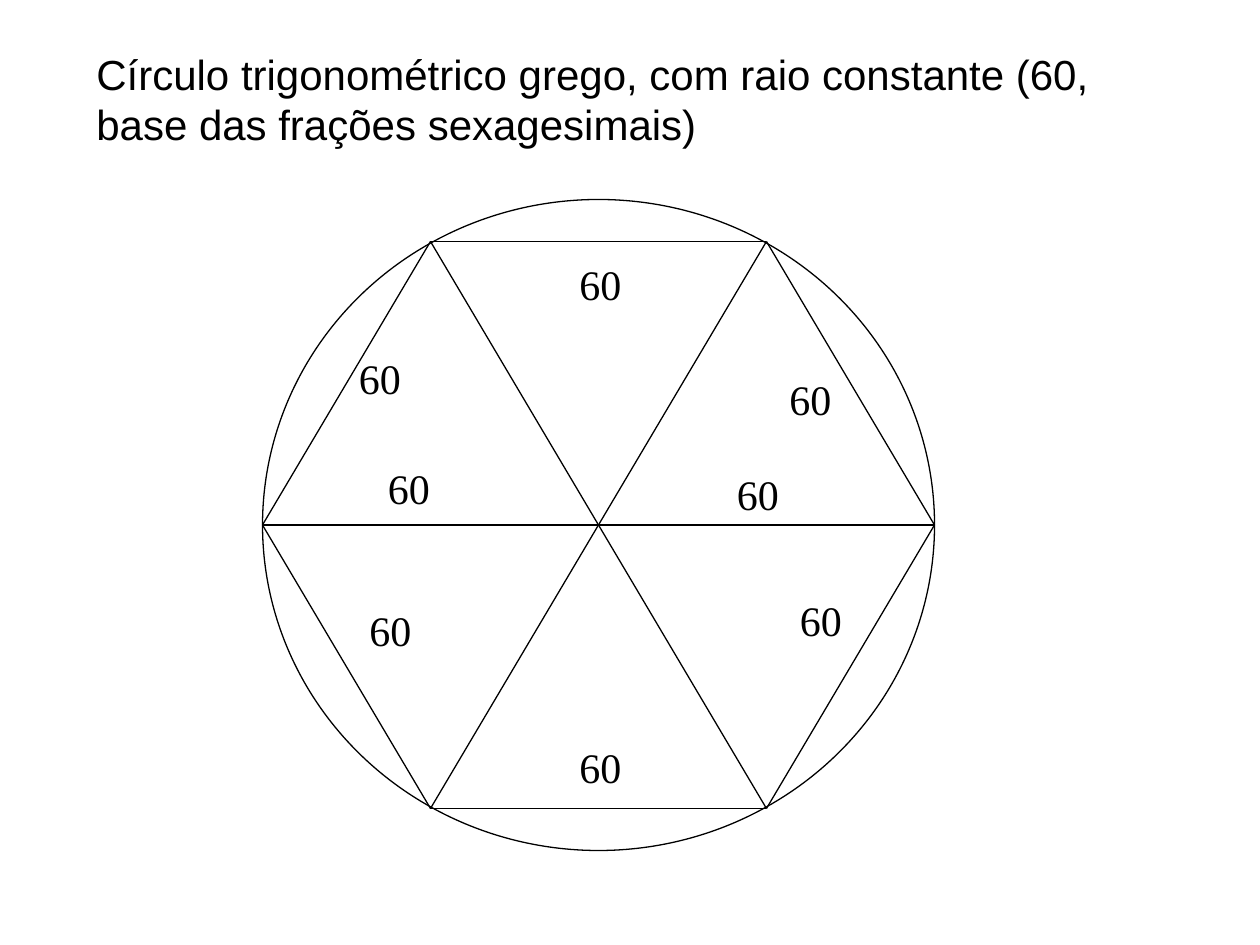
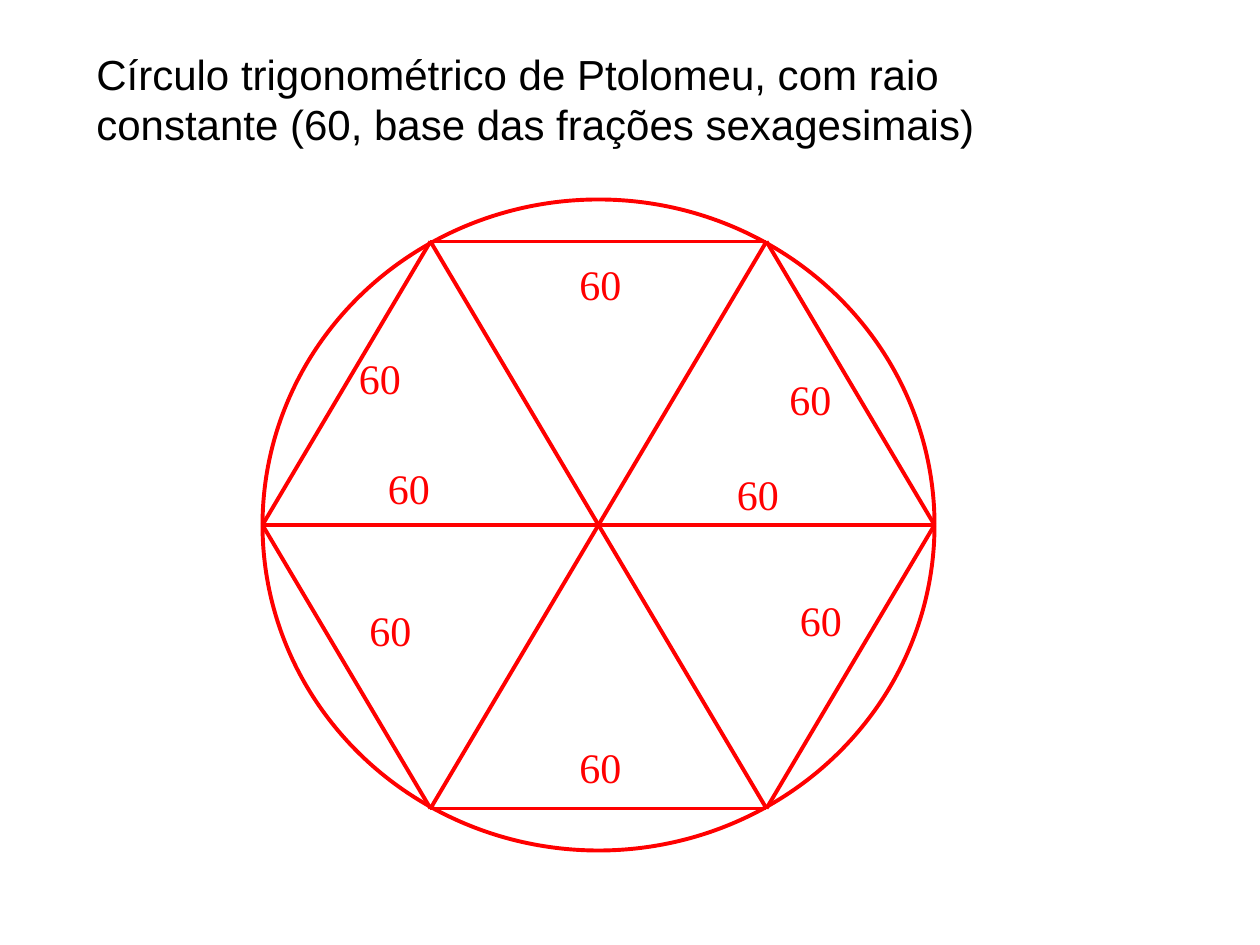
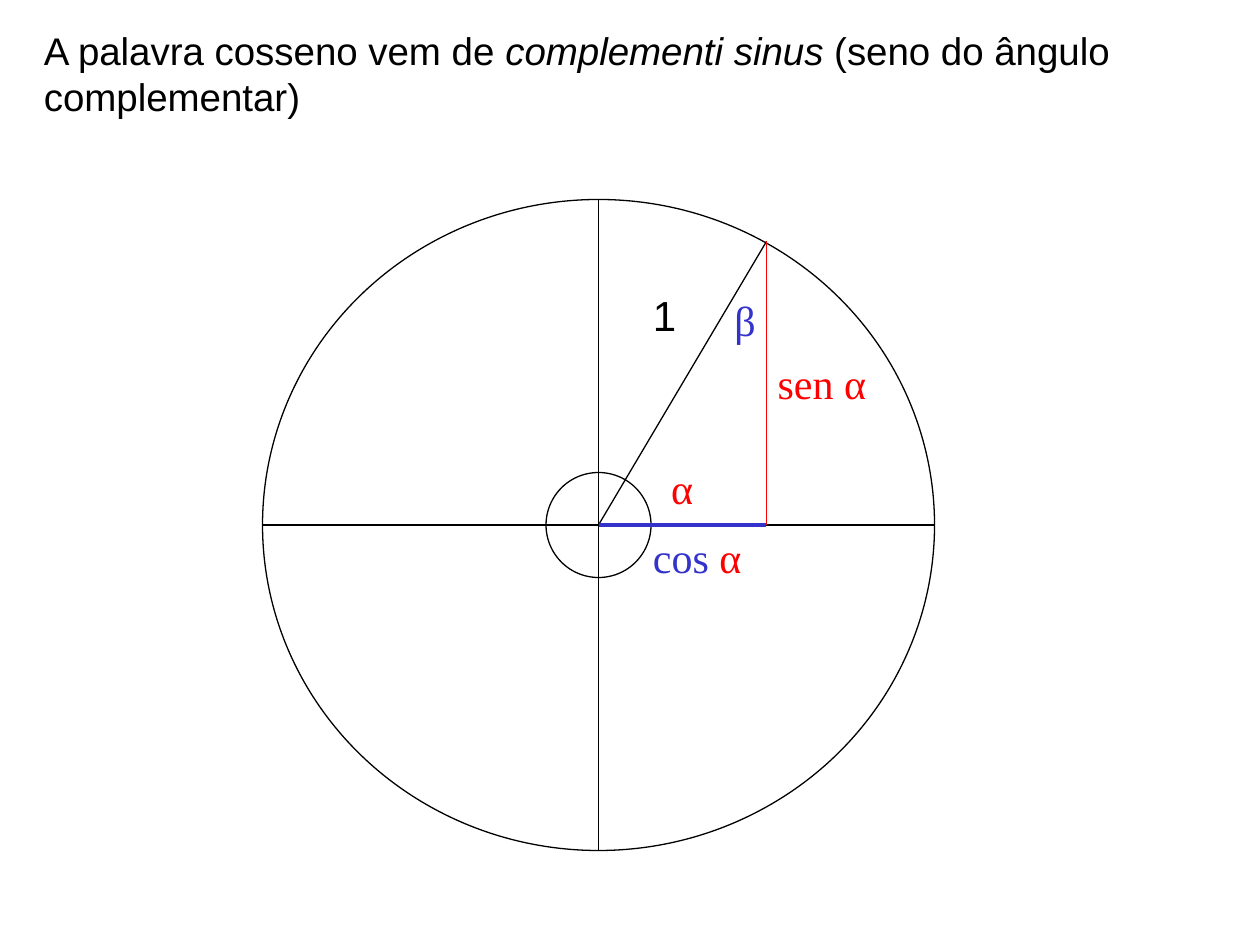
import dataclasses
import itertools

import lxml.etree
import pptx
import pptx.dml.color
import pptx.enum.shapes
import pptx.enum.text
import pptx.oxml.ns
import pptx.slide
import pptx.util

# Shared scale, colours and fonts
PX = 9525
BLACK = pptx.dml.color.RGBColor(0x00, 0x00, 0x00)
RED = pptx.dml.color.RGBColor(0xFF, 0x00, 0x00)
BLUE = pptx.dml.color.RGBColor(0x33, 0x33, 0xCC)
SANS = "Arial"
SERIF = "Times New Roman"
THIN, MEDIUM, THICK = 0.75, 1, 2.25

# Shared geometry, in px
Point = tuple[int, int]
CENTER: Point = (456, 400)
RADIUS_X, RADIUS_Y = 256, 248
HALF_SIDE, APOTHEM = 128, 216
LABEL_HEIGHT = 48


@dataclasses.dataclass(frozen=True)
class Span:
    text: str
    color: pptx.dml.color.RGBColor = BLACK
    font: str = SERIF
    size: int = 24
    italic: bool = False


@dataclasses.dataclass(frozen=True)
class Label:
    left: int
    top: int
    width: int
    spans: tuple[Span, ...]
    height: int = LABEL_HEIGHT
    wrap: bool = False


@dataclasses.dataclass(frozen=True)
class Stroke:
    color: pptx.dml.color.RGBColor = BLACK
    width: float = THIN


def from_center(right: int, down: int) -> Point:
    return CENTER[0] + right, CENTER[1] + down


# Vertices run clockwise from the left end of the diameter
HEXAGON = [
    from_center(-RADIUS_X, 0),
    from_center(-HALF_SIDE, -APOTHEM),
    from_center(HALF_SIDE, -APOTHEM),
    from_center(RADIUS_X, 0),
    from_center(HALF_SIDE, APOTHEM),
    from_center(-HALF_SIDE, APOTHEM),
]
SIXTY_PLACES = [
    (286, 348), (272, 456), (432, 560), (600, 448),
    (552, 352), (592, 280), (432, 192), (264, 264),
]


# Drawing functions
def set_attributes(target: object, values: dict[str, object]) -> None:
    for name, value in values.items():
        setattr(target, name, value)


def apply_stroke(line: object, stroke: Stroke) -> None:
    line.color.rgb = stroke.color
    line.width = pptx.util.Pt(stroke.width)


def draw_label(page: pptx.slide.Slide, label: Label) -> None:
    bounds = (label.left, label.top, label.width, label.height)
    box = page.shapes.add_textbox(*(length * PX for length in bounds))
    set_attributes(box.text_frame, {
        "word_wrap": label.wrap,
        "auto_size": pptx.enum.text.MSO_AUTO_SIZE.SHAPE_TO_FIT_TEXT,
    })
    para = box.text_frame.paragraphs[0]
    for span in label.spans:
        run = para.add_run()
        run.text = span.text
        set_attributes(run.font, {
            "name": span.font,
            "size": pptx.util.Pt(span.size),
            "italic": span.italic,
        })
        run.font.color.rgb = span.color


def draw_line(page: pptx.slide.Slide, start: Point, end: Point, stroke: Stroke) -> None:
    line = page.shapes.add_connector(
        pptx.enum.shapes.MSO_CONNECTOR.STRAIGHT,
        *(length * PX for length in start + end),
    )
    apply_stroke(line.line, stroke)
    lxml.etree.SubElement(line._element.spPr, pptx.oxml.ns.qn("a:effectLst"))


def draw_circle(page: pptx.slide.Slide, radius_x: int, radius_y: int, stroke: Stroke) -> None:
    left, top = from_center(-radius_x, -radius_y)
    bounds = (left, top, 2 * radius_x, 2 * radius_y)
    circle = page.shapes.add_shape(
        pptx.enum.shapes.MSO_SHAPE.OVAL, *(length * PX for length in bounds)
    )
    circle.shadow.inherit = False
    circle.fill.background()
    apply_stroke(circle.line, stroke)


def add_page(deck: object) -> pptx.slide.Slide:
    return deck.slides.add_slide(deck.slide_layouts[6])


# Circle with an inscribed hexagon of side 60
def build_hexagon_page(deck: object, title: str, stroke: Stroke) -> None:
    page = add_page(deck)
    draw_circle(page, RADIUS_X, RADIUS_Y, stroke)
    for start, end in zip(HEXAGON[:3], HEXAGON[3:]):
        draw_line(page, start, end, stroke)
    for start, end in itertools.pairwise(HEXAGON + HEXAGON[:1]):
        draw_line(page, start, end, stroke)
    for left, top in SIXTY_PLACES:
        draw_label(page, Label(left, top, 51, (Span("60", stroke.color),)))
    draw_label(page, Label(64, 32, 785, (Span(title, font=SANS),), 86, True))


# Unit circle with sine and cosine
def build_cosine_page(deck: object) -> None:
    page = add_page(deck)
    thin = Stroke()
    draw_circle(page, RADIUS_X, RADIUS_Y, thin)
    draw_circle(page, 40, 40, thin)
    draw_line(page, from_center(-RADIUS_X, 0), from_center(RADIUS_X, 0), thin)
    draw_line(page, from_center(0, -RADIUS_Y), from_center(0, RADIUS_Y), thin)

    # Triangle, then its coloured legs
    foot, tip = from_center(HALF_SIDE, 0), from_center(HALF_SIDE, -APOTHEM)
    for start, end, stroke in (
        (tip, foot, Stroke(width=MEDIUM)),
        (CENTER, foot, thin),
        (CENTER, tip, thin),
        (tip, foot, Stroke(RED)),
        (CENTER, foot, Stroke(BLUE, THICK)),
    ):
        draw_line(page, start, end, stroke)

    # Title and labels
    title = (
        Span("A palavra cosseno vem de ", font=SANS, size=22),
        Span("complementi sinus", font=SANS, size=22, italic=True),
        Span(" (seno do ângulo complementar)", font=SANS, size=22),
    )
    for label in (
        Label(24, 16, 896, title, 80, True),
        Label(502, 348, 39, (Span("α", RED),)),
        Label(583, 268, 90, (Span("sen α", RED),)),
        Label(488, 216, 37, (Span("1", font=SANS),)),
        Label(488, 400, 112, (Span("cos ", BLUE), Span("α", RED)), wrap=True),
        Label(550, 220, 36, (Span("β", BLUE),)),
    ):
        draw_label(page, label)


def main() -> None:
    deck = pptx.Presentation()
    set_attributes(deck, {"slide_width": 960 * PX, "slide_height": 720 * PX})
    build_hexagon_page(
        deck,
        "Círculo trigonométrico grego, com raio constante (60, base das frações sexagesimais)",
        Stroke(),
    )
    build_hexagon_page(
        deck,
        "Círculo trigonométrico de Ptolomeu, com raio constante (60, base das frações sexagesimais)",
        Stroke(RED, THICK),
    )
    build_cosine_page(deck)
    deck.save("out.pptx")


if __name__ == "__main__":
    main()
